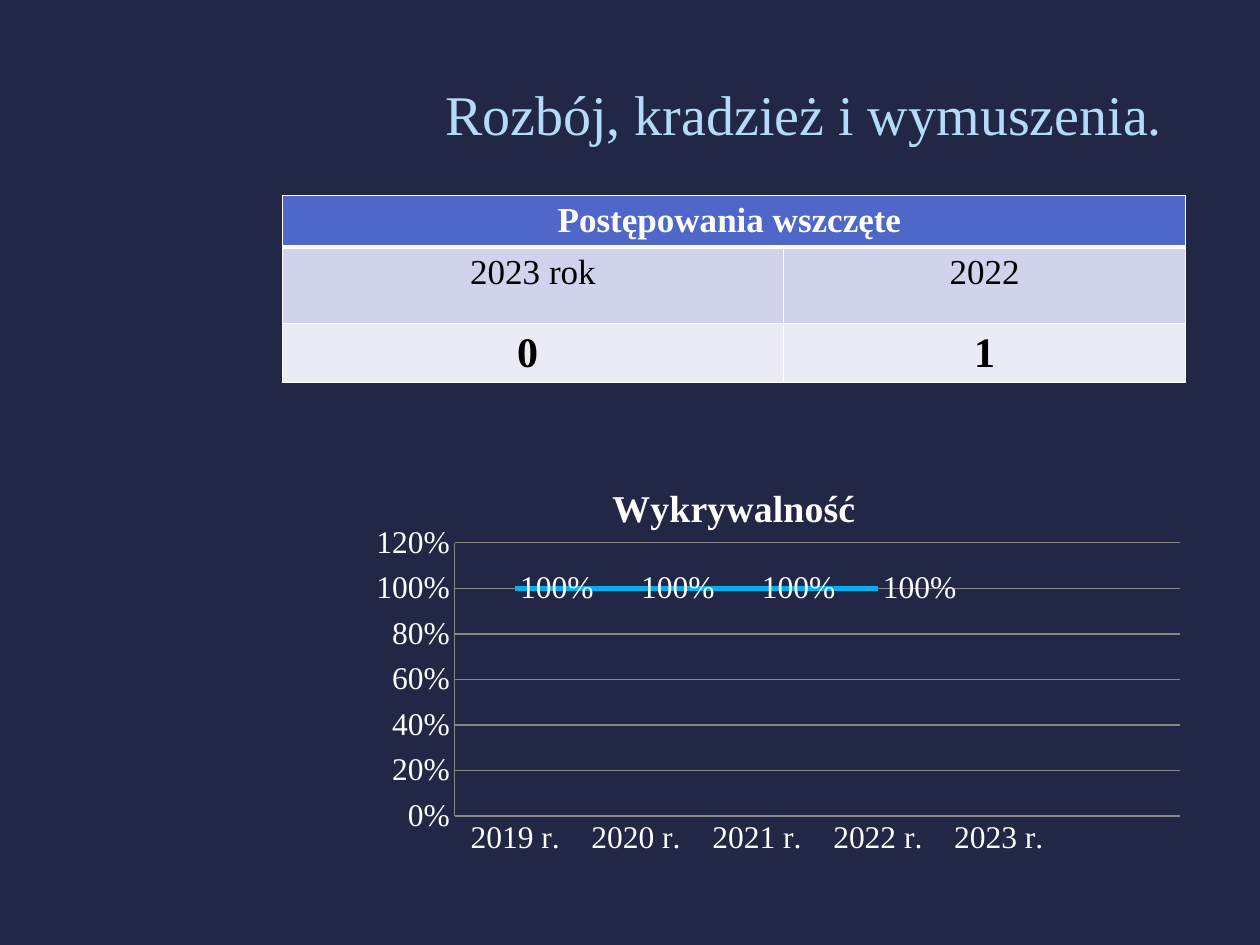
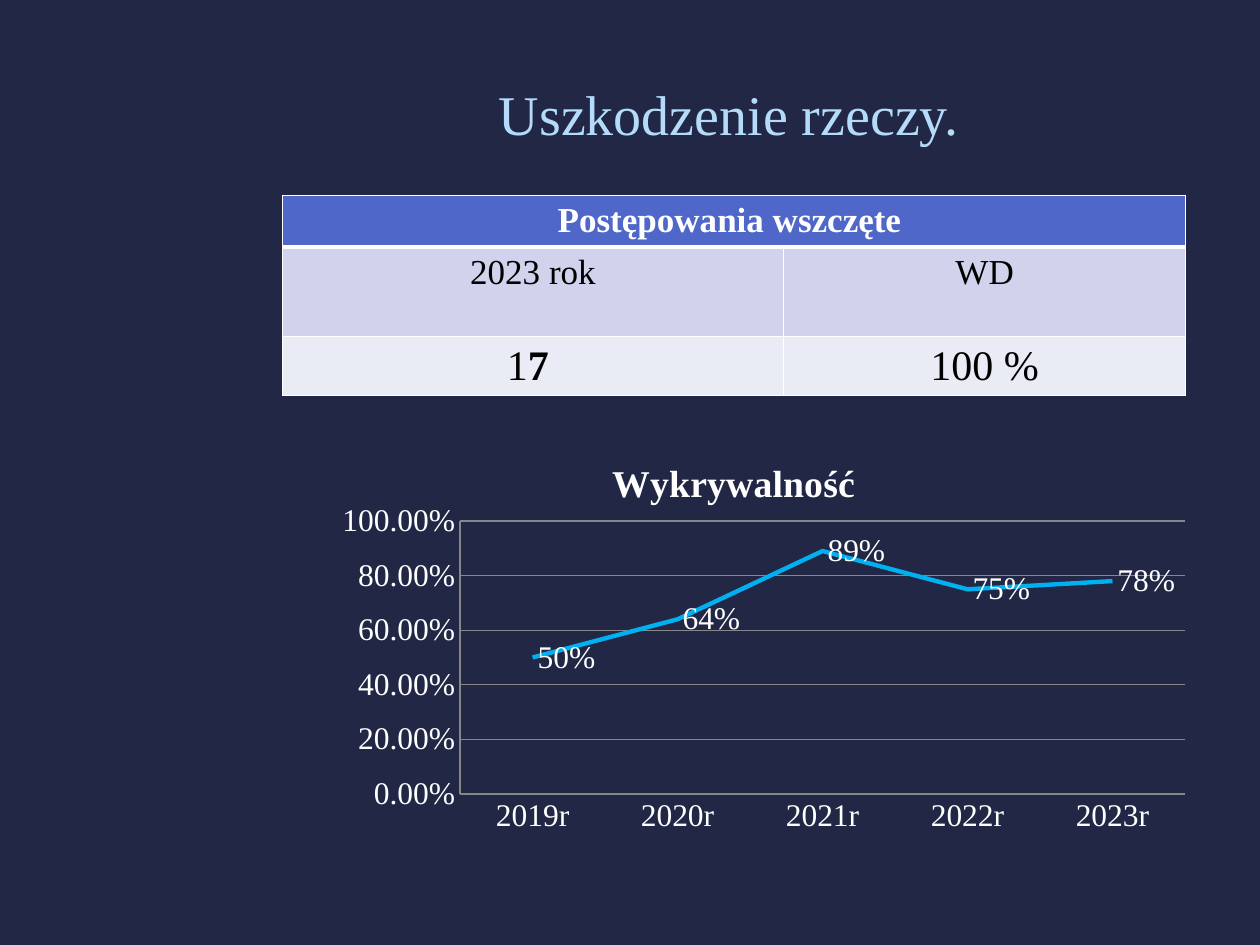
from dataclasses import dataclass
from typing import Optional

from lxml.etree import SubElement
from pptx import Presentation
from pptx.chart.data import CategoryChartData
from pptx.dml.color import RGBColor
from pptx.enum.chart import XL_CHART_TYPE as ChartType, XL_LABEL_POSITION as LabelPosition
from pptx.enum.chart import XL_TICK_MARK as TickMark
from pptx.enum.text import MSO_ANCHOR as Anchor, PP_ALIGN as Align
from pptx.oxml import parse_xml
from pptx.oxml.ns import nsdecls, qn
from pptx.util import Inches, Pt

WIDTH, HEIGHT = Inches(10), Inches(7.5)
FONT = "Times New Roman"
NAVY, SKY, WHITE, BLACK = "212745", "B4DCFA", "FFFFFF", "000000"
HEADER_FILL, YEAR_FILL, VALUE_FILL = "4E67C8", "D0D3EB", "E9EBF5"
TREND, GRID = "00B0F0", "878787"

# Percentages of the slide's width or height
CONTENT_LEFT, CONTENT_WIDTH, CONTENT_RIGHT = 22.4, 71.7, 93.3
TITLE_TOP, TITLE_HEIGHT = 6.13, 11.6
TABLE_TOP, TABLE_COLUMNS = 20.67, (39.8, 31.9)
CHART_HEIGHT = 43.07

Runs = list[tuple[str, bool]]


@dataclass
class Offence:
    title: str
    title_left: float
    title_align: Align
    row_heights: tuple[float, float, float]
    labels: tuple[str, str]
    counts: tuple[Runs, Runs]
    chart_top: float
    plot: tuple[float, float, float, float]
    years: list[str]
    rates: list[Optional[float]]
    axis_max: float
    axis_format: str


OFFENCES = [
    Offence("Rozbój, kradzież i wymuszenia.", 24.8, Align.RIGHT, (4.93, 8.13, 5.73),
            ("2023 rok", "2022"), ([("0 ", True)], [("1", True)]),
            48.93, (19.1, 19.8, 80.3, 67.1),
            [f"{year} r." for year in range(2019, 2024)] + [""],
            [1, 1, 1, 1, None, None], 1.2, "0%"),
    Offence("Uszkodzenie rzeczy.", CONTENT_LEFT, Align.CENTER, (5.07, 9.47, 5.87),
            ("2023 rok", "WD"), ([("1", False), ("7 ", True)], [("100 %", False)]),
            46.27, (19.7, 20.6, 80.3, 67.1),
            [f"{year}r" for year in range(2019, 2024)],
            [0.5, 0.64, 0.89, 0.75, 0.78], 1, "0.00%"),
]


def across(percent: float) -> int:
    return round(WIDTH * percent / 100)


def down(percent: float) -> int:
    return round(HEIGHT * percent / 100)


def rgb(value: str) -> RGBColor:
    return RGBColor.from_string(value)


def set_font(font, size: float, color: str, bold: bool = False) -> None:
    font.name, font.size, font.bold = FONT, Pt(size), bold
    font.color.rgb = rgb(color)


def add_title(slide, offence: Offence) -> None:
    title = slide.shapes.title
    title.left, title.top = across(offence.title_left), down(TITLE_TOP)
    title.width = across(CONTENT_RIGHT - offence.title_left)
    title.height = down(TITLE_HEIGHT)
    title.text_frame.vertical_anchor = Anchor.MIDDLE
    paragraph = title.text_frame.paragraphs[0]
    paragraph.alignment = offence.title_align
    run = paragraph.add_run()
    run.text = offence.title
    set_font(run.font, 32, SKY)


def set_borders(cell, top: float, bottom: float) -> None:
    """Draw white cell borders; top and bottom widths are in points."""
    properties = cell._tc.get_or_add_tcPr()
    for index, (side, width) in enumerate(zip("LRTB", (1, 1, top, bottom))):
        properties.insert(index, parse_xml(
            f'<a:ln{side} {nsdecls("a")} w="{Pt(width)}"><a:solidFill>'
            f'<a:srgbClr val="{WHITE}"/></a:solidFill></a:ln{side}>'))


def fill_cell(cell, runs: Runs, size: float, color: str) -> None:
    paragraph = cell.text_frame.paragraphs[0]
    paragraph.alignment = Align.CENTER
    for text, bold in runs:
        run = paragraph.add_run()
        run.text = text
        set_font(run.font, size, color, bold)


def add_proceedings_table(slide, offence: Offence) -> None:
    table = slide.shapes.add_table(
        3, 2, across(CONTENT_LEFT), down(TABLE_TOP),
        across(CONTENT_WIDTH), down(sum(offence.row_heights))).table
    for column, width in zip(table.columns, TABLE_COLUMNS):
        column.width = across(width)
    for row, height in zip(table.rows, offence.row_heights):
        row.height = down(height)

    looks = ((HEADER_FILL, 1, 3), (YEAR_FILL, 3, 1), (VALUE_FILL, 1, 1))
    for row, (fill, top, bottom) in zip(table.rows, looks):
        for cell in row.cells:
            cell.fill.solid()
            cell.fill.fore_color.rgb = rgb(fill)
            set_borders(cell, top, bottom)

    header = table.cell(0, 0)
    header.merge(table.cell(0, 1))
    fill_cell(header, [("Postępowania wszczęte ", True)], 20, WHITE)
    for column, (label, count) in enumerate(zip(offence.labels, offence.counts)):
        fill_cell(table.cell(1, column), [(label, False)], 20, BLACK)
        fill_cell(table.cell(2, column), count, 24, BLACK)


def place_plot(chart, plot: tuple[float, float, float, float]) -> None:
    """Fix the inner plot area, in percentages of the chart."""
    area = chart._chartSpace.chart.plotArea
    for previous in area.findall(qn("c:layout")):
        area.remove(previous)
    layout = parse_xml(f'<c:layout {nsdecls("c")}/>')
    manual = SubElement(layout, qn("c:manualLayout"))
    settings = [("layoutTarget", "inner"), ("xMode", "edge"), ("yMode", "edge")]
    settings += [(key, f"{share / 100:.3f}") for key, share in zip("xywh", plot)]
    for key, value in settings:
        SubElement(manual, qn(f"c:{key}")).set("val", value)
    area.insert(0, layout)


def add_detection_chart(slide, offence: Offence) -> None:
    data = CategoryChartData(number_format="0%")
    data.categories = offence.years
    data.add_series("Series 1", offence.rates)
    chart = slide.shapes.add_chart(
        ChartType.LINE, across(CONTENT_LEFT), down(offence.chart_top),
        across(CONTENT_WIDTH), down(CHART_HEIGHT), data).chart
    set_font(chart.font, 18, WHITE)
    chart.has_legend = False
    chart.has_title = True
    heading = chart.chart_title.text_frame.paragraphs[0].add_run()
    heading.text = "Wykrywalność"
    set_font(heading.font, 21.6, WHITE, bold=True)
    place_plot(chart, offence.plot)

    rate_axis = chart.value_axis
    rate_axis.minimum_scale, rate_axis.maximum_scale = 0, offence.axis_max
    rate_axis.major_unit = 0.2
    rate_axis.tick_labels.number_format = offence.axis_format
    rate_axis.tick_labels.number_format_is_linked = False
    rate_axis.has_major_gridlines = True
    for axis in (chart.category_axis, rate_axis):
        axis.major_tick_mark = axis.minor_tick_mark = TickMark.NONE
    for line in (chart.category_axis.format.line, rate_axis.format.line,
                 rate_axis.major_gridlines.format.line):
        line.color.rgb = rgb(GRID)
        line.width = Pt(0.75)

    plot = chart.plots[0]
    plot.vary_by_categories = False
    trend = plot.series[0]
    trend.smooth = False
    trend.format.line.color.rgb = rgb(TREND)
    trend.format.line.width = Pt(2.5)
    labels = trend.data_labels
    labels.show_value = True
    labels.number_format, labels.number_format_is_linked = "0%", False
    labels.position = LabelPosition.RIGHT
    set_font(labels.font, 18, WHITE)


def main() -> None:
    deck = Presentation()
    deck.slide_width, deck.slide_height = WIDTH, HEIGHT
    backdrop = deck.slide_master.background.fill
    backdrop.solid()
    backdrop.fore_color.rgb = rgb(NAVY)
    title_only = deck.slide_layouts.get_by_name("Title Only")
    for offence in OFFENCES:
        slide = deck.slides.add_slide(title_only)
        add_title(slide, offence)
        add_detection_chart(slide, offence)
        add_proceedings_table(slide, offence)
    deck.save("out.pptx")


if __name__ == "__main__":
    main()
